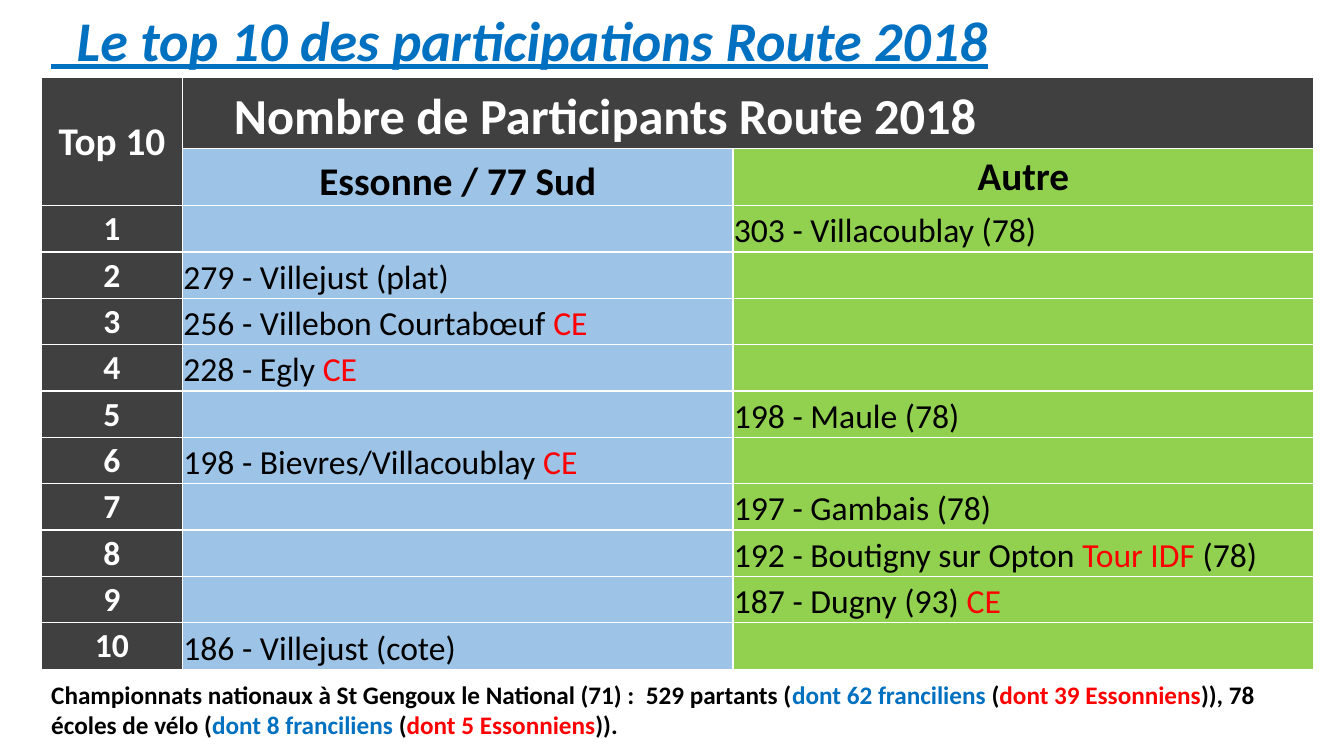
from lxml import etree
from pptx import Presentation
from pptx.dml.color import RGBColor
from pptx.enum.text import MSO_ANCHOR, MSO_AUTO_SIZE, PP_ALIGN
from pptx.oxml.ns import qn
from pptx.util import Inches, Pt

LEFT, CENTER = PP_ALIGN.LEFT, PP_ALIGN.CENTER
MIDDLE, BOTTOM = MSO_ANCHOR.MIDDLE, MSO_ANCHOR.BOTTOM
FIT_SHAPE = MSO_AUTO_SIZE.SHAPE_TO_FIT_TEXT
TITLE_ONLY = 5

BLACK, WHITE, RED, BLUE = "000000", "FFFFFF", "FF0000", "0070C0"
DARK, LIGHT_BLUE, GREEN = "404040", "9DC3E6", "92D050"

MARGIN, WIDTH = 0.41, 12.62
COLUMN_WIDTHS = [1.4, 5.46, 5.76]
ROW_HEIGHTS = [0.7, 0.57] + [0.46] * 10
ESSONNE, OTHER = 1, 2

RANKING = [
    (OTHER, [("303 - Villacoublay (78)", BLACK)]),
    (ESSONNE, [("279 - Villejust (plat)", BLACK)]),
    (ESSONNE, [("256 - Villebon Courtabœuf ", BLACK), ("CE", RED)]),
    (ESSONNE, [("228 - Egly ", BLACK), ("CE", RED)]),
    (OTHER, [("198 - Maule (78)", BLACK)]),
    (ESSONNE, [("198 - Bievres/Villacoublay ", BLACK), ("CE", RED)]),
    (OTHER, [("197 - Gambais (78)", BLACK)]),
    (OTHER, [("192 - Boutigny sur Opton ", BLACK), ("Tour IDF", RED), (" (78)", BLACK)]),
    (OTHER, [("187 - Dugny (93) ", BLACK), ("CE", RED)]),
    (ESSONNE, [("186 - Villejust (cote)", BLACK)]),
]

CHAMPIONSHIP = [
    ("Championnats nationaux à St Gengoux le National (71) :  529 partants (", BLACK),
    ("dont 62 franciliens ", BLUE),
    ("(", BLACK),
    ("dont 39 Essonniens", RED),
    (")), 78 écoles de vélo (", BLACK),
    ("dont 8 franciliens", BLUE),
    (" (", BLACK),
    ("dont 5 Essonniens", RED),
    (")).", BLACK),
]


def color(value):
    """Return the colour for a hex string."""
    return RGBColor.from_string(value)


class SlideBuilder:
    """Hold the text style and the current slide, and add its elements."""

    def __init__(self, slide, font="Calibri"):
        """Remember the slide and its font."""
        self.slide = slide
        self.font = font

    def add_runs(self, frame, parts, size, bold=True, align=LEFT):
        """Add coloured parts as one paragraph and return its runs."""
        paragraph = frame.paragraphs[0]
        paragraph.alignment = align
        for text, value in parts:
            run = paragraph.add_run()
            run.text = text
            run.font.name = self.font
            run.font.size = Pt(size)
            run.font.bold = bold
            run.font.color.rgb = color(value)
        return paragraph.runs

    def title(self, text, top, height):
        """Place and format the title placeholder."""
        shape = self.slide.shapes.title
        shape.left, shape.top = Inches(MARGIN), Inches(top)
        shape.width, shape.height = Inches(WIDTH), Inches(height)
        frame = shape.text_frame
        frame.auto_size = FIT_SHAPE
        for run in self.add_runs(frame, [(text, BLUE)], 40):
            run.font.italic = True
            run.font.underline = True

    def text(self, parts, top, height, size):
        """Add a wrapping text box."""
        shape = self.slide.shapes.add_textbox(
            Inches(MARGIN), Inches(top), Inches(WIDTH), Inches(height))
        shape.text_frame.word_wrap = True
        shape.text_frame.auto_size = FIT_SHAPE
        self.add_runs(shape.text_frame, parts, size)

    def borders(self, cell, value):
        """Draw thin borders on the four sides of a cell."""
        properties = cell._tc.get_or_add_tcPr()
        for position, side in enumerate(("lnL", "lnR", "lnT", "lnB")):
            line = etree.Element(qn(f"a:{side}"), w=str(Pt(1)))
            fill = etree.SubElement(line, qn("a:solidFill"))
            etree.SubElement(fill, qn("a:srgbClr"), val=value)
            properties.insert(position, line)

    def table(self, top, row_heights, column_widths, fill_for):
        """Add a filled and bordered table and return it."""
        table = self.slide.shapes.add_table(
            len(row_heights), len(column_widths), Inches(MARGIN), Inches(top),
            Inches(WIDTH), Inches(sum(row_heights))).table
        table.first_row = table.horz_banding = False
        for column, width in zip(table.columns, column_widths):
            column.width = Inches(width)
        for row_index, (row, height) in enumerate(zip(table.rows, row_heights)):
            row.height = Inches(height)
            for column_index, cell in enumerate(row.cells):
                cell.fill.solid()
                cell.fill.fore_color.rgb = color(fill_for(row_index, column_index))
                cell.margin_left = cell.margin_right = cell.margin_top = Inches(0.01)
                cell.margin_bottom = 0
                self.borders(cell, WHITE)
        return table

    def cell(self, cell, parts, size, anchor=MIDDLE, align=CENTER, bold=True):
        """Put text into a table cell."""
        cell.vertical_anchor = anchor
        self.add_runs(cell.text_frame, parts, size, bold, align)


def ranking_fill(row, column):
    """Return the fill of a ranking cell."""
    return DARK if row == 0 else (DARK, LIGHT_BLUE, GREEN)[column]


def main():
    """Build the slide and save it."""
    presentation = Presentation()
    presentation.slide_width = Inches(13.33)
    presentation.slide_height = Inches(7.5)
    slide = presentation.slides.add_slide(presentation.slide_layouts[TITLE_ONLY])
    builder = SlideBuilder(slide)
    builder.title("  Le top 10 des participations Route 2018", 0, 0.77)

    table = builder.table(0.77, ROW_HEIGHTS, COLUMN_WIDTHS, ranking_fill)
    corner, heading = table.cell(0, 0), table.cell(0, ESSONNE)
    corner.merge(table.cell(1, 0))
    heading.merge(table.cell(0, OTHER))
    heading.margin_left = Inches(0.51)
    builder.cell(corner, [("Top 10", WHITE)], 28)
    builder.cell(heading, [("Nombre de Participants Route 2018", WHITE)], 36, BOTTOM, LEFT)
    builder.cell(table.cell(1, ESSONNE), [("Essonne / 77 Sud", BLACK)], 28, BOTTOM)
    builder.cell(table.cell(1, OTHER), [("Autre", BLACK)], 28)
    for rank, (column, parts) in enumerate(RANKING, start=1):
        builder.cell(table.cell(rank + 1, 0), [(str(rank), WHITE)], 24)
        builder.cell(table.cell(rank + 1, column), parts, 24, BOTTOM, LEFT, bold=False)

    builder.text(CHAMPIONSHIP, 6.69, 0.71, 18)
    presentation.save("out.pptx")


if __name__ == "__main__":
    main()
